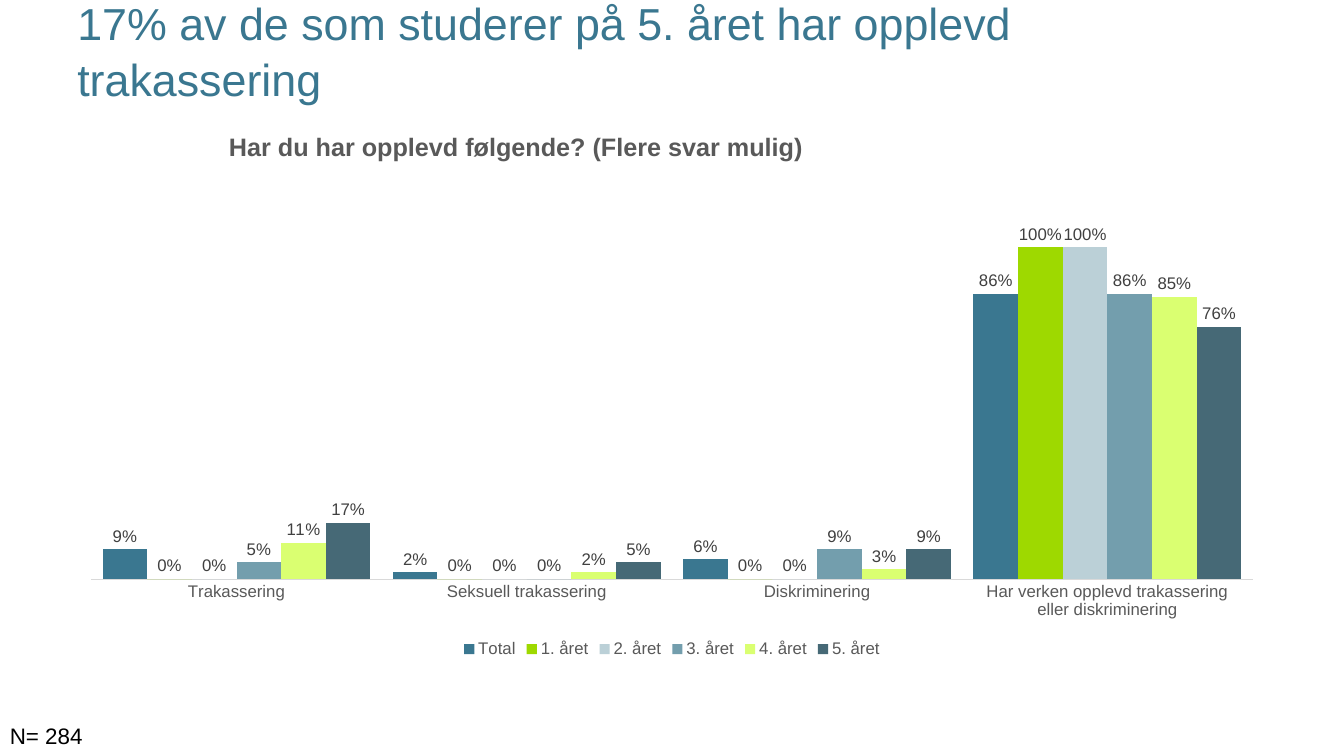
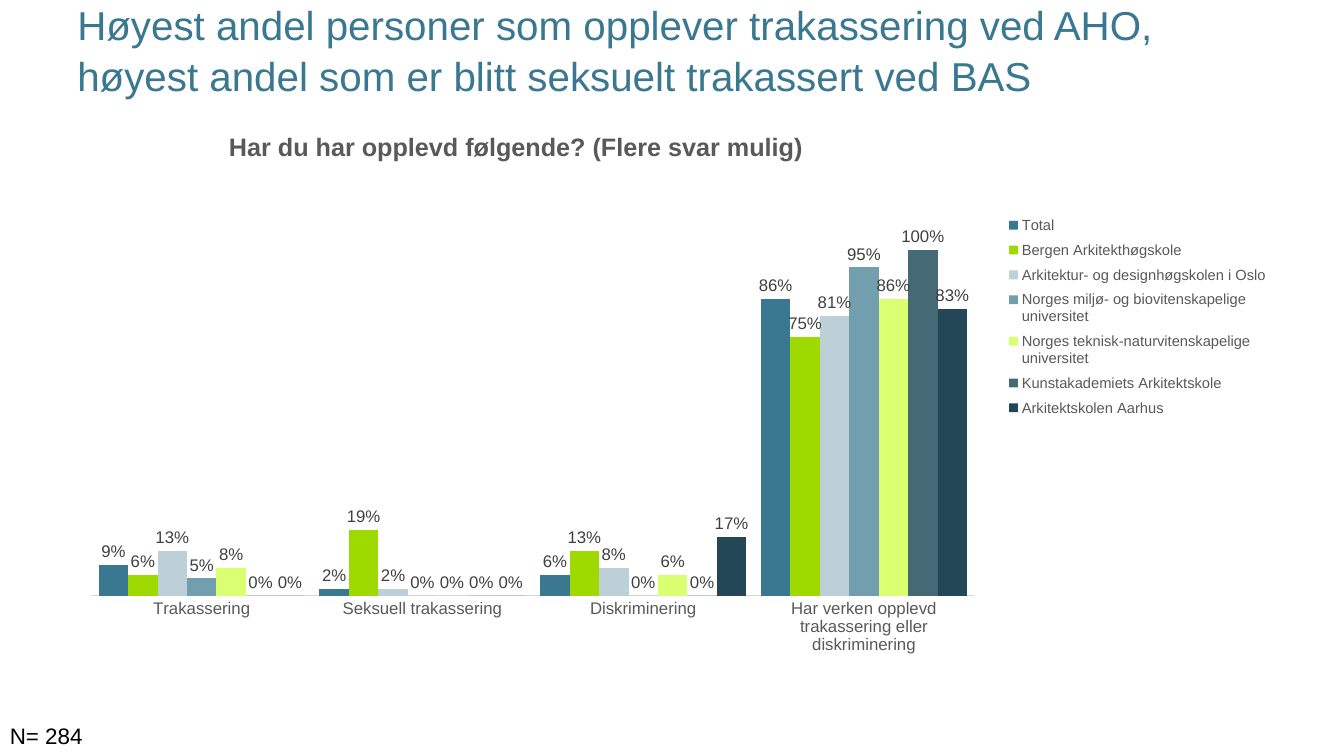
import pptx
import pptx.chart.data
import pptx.dml.color
import pptx.enum.chart
import pptx.enum.text
import pptx.oxml
import pptx.oxml.ns
import pptx.util
from pptx.util import Pt

# Shared colours
TEAL, GREY, LABEL_GREY, AXIS_GREY = "3A7790", "595959", "404040", "D9D9D9"
SERIES_COLOURS = [TEAL, "9ED900", "BBD0D7", "739EAD", "DAFF71", "466976", "234756"]

# Shared wording
QUESTION = "Har du har opplevd følgende? (Flere svar mulig)"
SAMPLE = "N= 284"
ANSWERS = ["Trakassering", "Seksuell trakassering", "Diskriminering",
           "Har verken opplevd trakassering eller diskriminering"]


def colour(value):
    return pptx.dml.color.RGBColor.from_string(value)


class Report:
    """Holds the style and the current slide."""

    title_format = {"size": Pt(32), "bold": False}
    question_format = {"size": Pt(18), "bold": True}
    axis_format = {"size": Pt(12), "bold": False}
    note_format = {"size": Pt(16), "bold": False}

    def __init__(self):
        self.deck = pptx.Presentation()
        self.deck.slide_width, self.deck.slide_height = Pt(960), Pt(540)
        self.page = None

    def new_page(self):
        self.page = self.deck.slides.add_slide(self.deck.slide_layouts[5])

    def format(self, font, values, hex_colour):
        for name, value in {"name": "Arial", **values}.items():
            setattr(font, name, value)
        font.color.rgb = colour(hex_colour)

    def title(self, text, size):
        box = self.page.shapes.title
        box.left, box.top, box.width, box.height = Pt(48), Pt(1), Pt(864), Pt(68)
        frame = box.text_frame
        frame.word_wrap = True
        frame.auto_size = pptx.enum.text.MSO_AUTO_SIZE.NONE
        frame.vertical_anchor = pptx.enum.text.MSO_ANCHOR.MIDDLE
        para = frame.paragraphs[0]
        para.alignment = pptx.enum.text.PP_ALIGN.LEFT
        para.line_spacing = 1.05
        span = para.add_run()
        span.text = text
        self.format(span.font, {**self.title_format, "size": Pt(size)}, TEAL)

    def note(self, text):
        box = self.page.shapes.add_textbox(Pt(0), Pt(512), Pt(77), Pt(27))
        box.text_frame.word_wrap = False
        span = box.text_frame.paragraphs[0].add_run()
        span.text = text
        self.format(span.font, self.note_format, "000000")

    def place(self, part, index, inner=False, **fractions):
        """Set a manual layout, in fractions of the chart area."""
        for old in part.xpath("c:layout"):
            part.remove(old)
        target = '<c:layoutTarget val="inner"/>' if inner else ""
        modes = "".join(f'<c:{axis}Mode val="edge"/>' for axis in "xy")
        values = "".join(f'<c:{key} val="{value}"/>' for key, value in fractions.items())
        part.insert(index, pptx.oxml.parse_xml(
            f'<c:layout {pptx.oxml.ns.nsdecls("c")}><c:manualLayout>'
            f"{target}{modes}{values}</c:manualLayout></c:layout>"))

    def chart(self, series, plot_area, legend_size, legend_area=None):
        data = pptx.chart.data.CategoryChartData(number_format="0%")
        data.categories = ANSWERS
        for name, values in series.items():
            data.add_series(name, values)
        chart = self.page.shapes.add_chart(
            pptx.enum.chart.XL_CHART_TYPE.COLUMN_CLUSTERED,
            Pt(48), Pt(78), Pt(864), Pt(395), data).chart
        self.format(chart.font, {"size": Pt(10)}, "000000")

        # Question above the plot
        chart.has_title = True
        para = chart.chart_title.text_frame.paragraphs[0]
        span = para.add_run()
        span.text = QUESTION
        self.format(span.font, self.question_format, GREY)
        self.place(chart.chart_title._element, 1, x=0.13, y=0.03)

        # Axes
        answers = chart.category_axis
        answers.major_tick_mark = pptx.enum.chart.XL_TICK_MARK.NONE
        answers.format.line.color.rgb = colour(AXIS_GREY)
        answers.format.line.width = Pt(0.75)
        self.format(answers.tick_labels.font, self.axis_format, GREY)
        shares = chart.value_axis
        shares.minimum_scale, shares.maximum_scale = 0, 1.2
        shares.has_major_gridlines = False
        shares.visible = False

        # Columns and their labels
        plot = chart.plots[0]
        plot.gap_width, plot.overlap = 50, 0
        plot.vary_by_categories = False
        for column, fill in zip(plot.series, SERIES_COLOURS):
            column.format.fill.solid()
            column.format.fill.fore_color.rgb = colour(fill)
            labels = column.data_labels
            labels.show_value = True
            labels.number_format, labels.number_format_is_linked = "0%", False
            labels.position = pptx.enum.chart.XL_LABEL_POSITION.OUTSIDE_END
            self.format(labels.font, self.axis_format, LABEL_GREY)
        self.place(chart._chartSpace.xpath("c:chart/c:plotArea")[0], 0, inner=True, **plot_area)

        # Legend: at the bottom, or at the right in a given area
        chart.has_legend = True
        positions = pptx.enum.chart.XL_LEGEND_POSITION
        chart.legend.position = positions.RIGHT if legend_area else positions.BOTTOM
        chart.legend.include_in_layout = False
        self.format(chart.legend.font, {"size": Pt(legend_size)}, GREY)
        if legend_area:
            self.place(chart.legend._element, 1, **legend_area)


def main():
    report = Report()

    # Results by year of study
    report.new_page()
    report.title("17% av de som studerer på 5. året har opplevd trakassering", 32)
    report.chart({
        "Total": [0.09, 0.02, 0.06, 0.86],
        "1. året": [0, 0, 0, 1],
        "2. året": [0, 0, 0, 1],
        "3. året": [0.05, 0, 0.09, 0.86],
        "4. året": [0.11, 0.02, 0.03, 0.85],
        "5. året": [0.17, 0.05, 0.09, 0.76],
    }, {"x": 0.02, "y": 0.13, "w": 0.96, "h": 0.72}, 12)
    report.note(SAMPLE)

    # Results by school
    report.new_page()
    report.title("Høyest andel personer som opplever trakassering ved AHO, "
                 "høyest andel som er blitt seksuelt trakassert ved BAS", 28.8)
    report.chart({
        "Total": [0.09, 0.02, 0.06, 0.86],
        "Bergen Arkitekthøgskole": [0.06, 0.19, 0.13, 0.75],
        "Arkitektur- og designhøgskolen i Oslo": [0.13, 0.02, 0.08, 0.81],
        "Norges miljø- og biovitenskapelige universitet": [0.05, 0, 0, 0.95],
        "Norges teknisk-naturvitenskapelige universitet": [0.08, 0, 0.06, 0.86],
        "Kunstakademiets Arkitektskole": [0, 0, 0, 1],
        "Arkitektskolen Aarhus": [0, 0, 0.17, 0.83],
    }, {"x": 0.02, "y": 0.13, "w": 0.73, "h": 0.75}, 10.5,
        {"x": 0.77, "y": 0.18, "w": 0.23, "h": 0.39})
    report.note(SAMPLE)

    report.deck.save("out.pptx")


if __name__ == "__main__":
    main()
